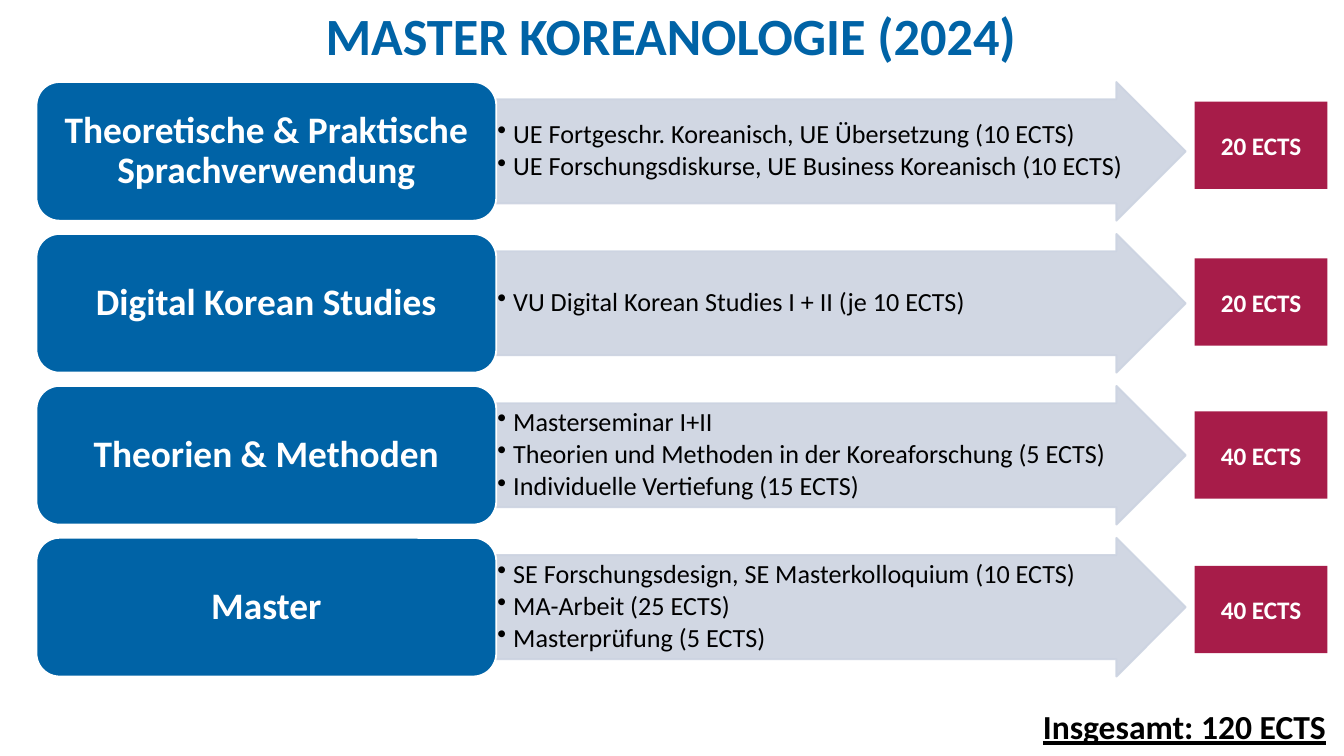
from dataclasses import dataclass

from lxml import etree
from pptx import Presentation
from pptx.dml.color import RGBColor
from pptx.enum.shapes import MSO_SHAPE
from pptx.enum.text import MSO_ANCHOR, MSO_AUTO_SIZE, PP_ALIGN
from pptx.oxml.ns import qn
from pptx.shapes.autoshape import Shape
from pptx.slide import Slide
from pptx.text.text import TextFrame, _Paragraph
from pptx.util import Cm, Pt

ARROW = MSO_SHAPE.RIGHT_ARROW
ROUNDED = MSO_SHAPE.ROUNDED_RECTANGLE
RECTANGLE = MSO_SHAPE.RECTANGLE
CENTER = PP_ALIGN.CENTER
MIDDLE = MSO_ANCHOR.MIDDLE

BLUE = RGBColor(0x00, 0x63, 0xA6)
PALE_BLUE = RGBColor(0xCC, 0xD3, 0xE1)
CRIMSON = RGBColor(0xA7, 0x1C, 0x49)
WHITE = RGBColor(0xFF, 0xFF, 0xFF)
BLACK = RGBColor(0x00, 0x00, 0x00)
FONT = "Calibri"

ROW_TOP = 1.55
ROW_PITCH = 2.87
ROW_HEIGHT = 2.62
LABEL_LEFT = 0.69
LABEL_WIDTH = 8.69
ARROW_LEFT = LABEL_LEFT + LABEL_WIDTH
ARROW_WIDTH = 13.03
ARROW_OPACITY = 90
BULLET_INDENT = Cm(0.3)


@dataclass(frozen=True)
class Module:
    label: str
    courses: tuple[str, ...]
    credits: str
    credits_top: float


MODULES = (
    Module(
        "Theoretische & Praktische Sprachverwendung",
        (
            "UE Fortgeschr. Koreanisch, UE Übersetzung (10 ECTS)",
            "UE Forschungsdiskurse, UE Business Koreanisch (10 ECTS)",
        ),
        "20 ECTS",
        1.92,
    ),
    Module(
        "Digital Korean Studies",
        ("VU Digital Korean Studies I + II (je 10 ECTS)",),
        "20 ECTS",
        4.88,
    ),
    Module(
        "Theorien & Methoden",
        (
            "Masterseminar I+II",
            "Theorien und Methoden in der Koreaforschung (5 ECTS)",
            "Individuelle Vertiefung (15 ECTS)",
        ),
        "40 ECTS",
        7.77,
    ),
    Module(
        "Master",
        (
            "SE Forschungsdesign, SE Masterkolloquium (10 ECTS)",
            "MA-Arbeit (25 ECTS)",
            "Masterprüfung (5 ECTS)",
        ),
        "40 ECTS",
        10.69,
    ),
)


def add_run(paragraph: _Paragraph, text: str, size: float, color: RGBColor,
            bold: bool = True, underline: bool = False) -> None:
    run = paragraph.add_run()
    run.text = text
    run.font.name = FONT
    run.font.size = Pt(size)
    run.font.bold = bold
    run.font.color.rgb = color
    if underline:
        run.font.underline = True


def set_margins(frame: TextFrame, horizontal: float, vertical: float) -> None:
    frame.margin_left = frame.margin_right = Cm(horizontal)
    frame.margin_top = frame.margin_bottom = Cm(vertical)


def add_block(slide: Slide, kind: MSO_SHAPE, left: float, top: float,
              width: float, height: float, color: RGBColor) -> Shape:
    """Add a filled shape without outline or shadow, its text centred vertically."""
    shape = slide.shapes.add_shape(kind, Cm(left), Cm(top), Cm(width), Cm(height))
    shape.shadow.inherit = False
    shape.fill.solid()
    shape.fill.fore_color.rgb = color
    shape.line.fill.background()
    shape.text_frame.word_wrap = True
    shape.text_frame.vertical_anchor = MIDDLE
    return shape


def set_outline(shape: Shape, color: RGBColor) -> None:
    shape.line.color.rgb = color
    shape.line.width = Pt(1)


def set_opacity(shape: Shape, percent: int) -> None:
    """Apply one opacity to both the fill and the outline."""
    for color in shape._element.spPr.iter(qn("a:srgbClr")):
        etree.SubElement(color, qn("a:alpha"), val=str(percent * 1000))


def add_bullet(paragraph: _Paragraph) -> None:
    properties = paragraph._p.get_or_add_pPr()
    properties.set("marL", str(BULLET_INDENT))
    properties.set("indent", str(-BULLET_INDENT))
    etree.SubElement(properties, qn("a:buChar"), char="•")


def add_courses(slide: Slide, module: Module, top: float) -> None:
    arrow = add_block(slide, ARROW, ARROW_LEFT, top, ARROW_WIDTH, ROW_HEIGHT, PALE_BLUE)
    arrow.adjustments[0] = 0.75
    arrow.adjustments[1] = 0.5
    set_outline(arrow, PALE_BLUE)
    set_opacity(arrow, ARROW_OPACITY)
    frame = arrow.text_frame
    set_margins(frame, 0.02, 0.02)
    for index, course in enumerate(module.courses):
        paragraph = frame.add_paragraph() if index else frame.paragraphs[0]
        add_bullet(paragraph)
        paragraph.level = 1
        paragraph.alignment = PP_ALIGN.LEFT
        paragraph.line_spacing = 0.9
        paragraph.space_after = Pt(2.1)
        add_run(paragraph, course, 14, BLACK, bold=False)


def add_label(slide: Slide, module: Module, top: float) -> None:
    label = add_block(slide, ROUNDED, LABEL_LEFT, top, LABEL_WIDTH, ROW_HEIGHT, BLUE)
    set_outline(label, WHITE)
    set_margins(label.text_frame, 0.2, 0.1)
    paragraph = label.text_frame.paragraphs[0]
    paragraph.alignment = CENTER
    paragraph.line_spacing = 0.9
    add_run(paragraph, module.label, 20, WHITE)


def add_credits(slide: Slide, module: Module) -> None:
    box = add_block(slide, RECTANGLE, 22.58, module.credits_top, 2.51, 1.65, CRIMSON)
    paragraph = box.text_frame.paragraphs[0]
    paragraph.alignment = CENTER
    add_run(paragraph, module.credits, 13.5, WHITE)


def add_title(slide: Slide, text: str) -> None:
    title = slide.shapes.title
    title.left, title.top, title.width, title.height = Cm(0), Cm(0.05), Cm(25.35), Cm(1.3)
    frame = title.text_frame
    frame.vertical_anchor = MIDDLE
    set_margins(frame, 0, 0)
    paragraph = frame.paragraphs[0]
    paragraph.alignment = CENTER
    paragraph.line_spacing = Pt(31)
    add_run(paragraph, text, 28, BLUE)


def add_total(slide: Slide, text: str) -> None:
    box = slide.shapes.add_textbox(Cm(19.46), Cm(13.21), Cm(5.92), Cm(1.02))
    box.text_frame.word_wrap = False
    box.text_frame.auto_size = MSO_AUTO_SIZE.SHAPE_TO_FIT_TEXT
    add_run(box.text_frame.paragraphs[0], text, 18, BLACK, underline=True)


def main() -> None:
    presentation = Presentation()
    presentation.slide_width = Cm(25.4)
    presentation.slide_height = Cm(14.28)
    slide = presentation.slides.add_slide(presentation.slide_layouts[5])
    add_title(slide, "MASTER KOREANOLOGIE (2024)")
    for index, module in enumerate(MODULES):
        top = ROW_TOP + index * ROW_PITCH
        add_courses(slide, module, top)
        add_label(slide, module, top)
        add_credits(slide, module)
    add_total(slide, "Insgesamt: 120 ECTS")
    presentation.save("out.pptx")


if __name__ == "__main__":
    main()
